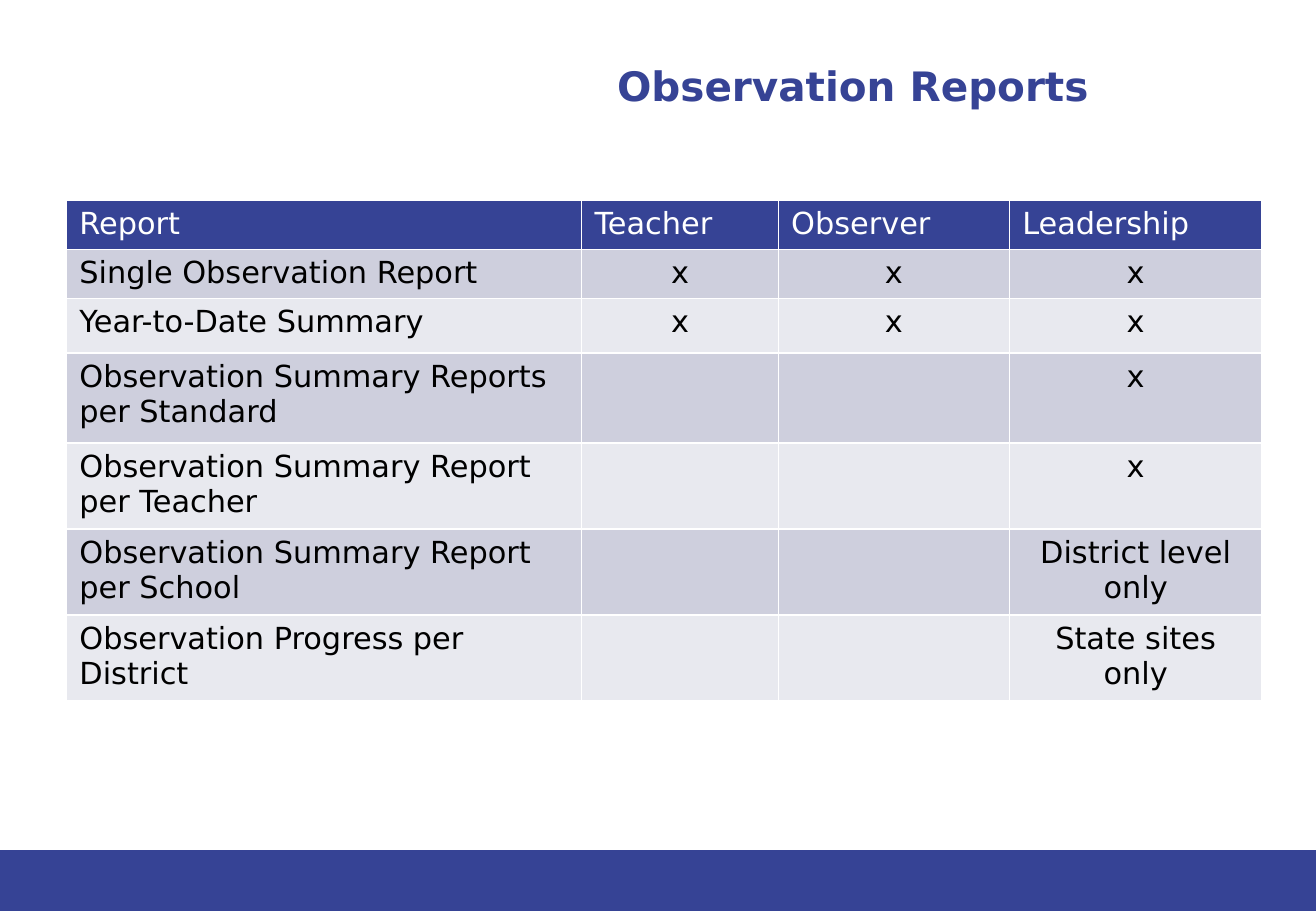
from dataclasses import dataclass

from lxml.etree import SubElement
from pptx import Presentation
from pptx.dml.color import RGBColor
from pptx.enum.shapes import MSO_SHAPE as Shape
from pptx.enum.text import MSO_ANCHOR as Anchor, PP_ALIGN as Align
from pptx.oxml.ns import qn
from pptx.slide import Slide
from pptx.table import _Cell as Cell
from pptx.text.text import TextFrame
from pptx.util import Cm, Pt

FONT = "DejaVu Sans"
COLORS = {
    "blue": "364395",
    "white": "FFFFFF",
    "black": "000000",
    "dark_band": "CECFDD",
    "light_band": "E8E9EF",
}
SLIDE_WIDTH, SLIDE_HEIGHT, FOOTER_HEIGHT = 27.51, 19.05, 1.27
COLUMN_WIDTHS = (10.77, 4.11, 4.83, 5.28)


@dataclass(frozen=True)
class ReportRow:
    height: float
    report: str
    teacher: str = ""
    observer: str = ""
    leadership: str = ""

    def texts(self) -> tuple[str, str, str, str]:
        return self.report, self.teacher, self.observer, self.leadership


ROWS = (
    ReportRow(1.02, "Report", "Teacher", "Observer", "Leadership"),
    ReportRow(1.03, "Single Observation Report", "x", "x", "x"),
    ReportRow(1.14, "Year-to-Date Summary", "x", "x", "x"),
    ReportRow(1.88, "Observation Summary Reports per Standard", leadership="x"),
    ReportRow(1.8, "Observation Summary Report per Teacher", leadership="x"),
    ReportRow(1.8, "Observation Summary Report per School", leadership="District level only"),
    ReportRow(1.8, "Observation Progress per District", leadership="State sites only"),
)


def rgb(name: str) -> RGBColor:
    return RGBColor.from_string(COLORS[name])


def write_text(frame: TextFrame, text: str, *, size: int = 18, color: str = "black",
               bold: bool = False, align: Align = Align.LEFT) -> None:
    frame.word_wrap = True
    paragraph = frame.paragraphs[0]
    paragraph.alignment = align
    run = paragraph.add_run()
    run.text = text
    run.font.name = FONT
    run.font.size = Pt(size)
    run.font.bold = bold
    run.font.color.rgb = rgb(color)


def add_borders(cell: Cell, color: str, width: float) -> None:
    properties = cell._tc.get_or_add_tcPr()
    for side in ("a:lnL", "a:lnR", "a:lnT", "a:lnB"):
        line = SubElement(properties, qn(side), w=str(Pt(width)))
        fill = SubElement(line, qn("a:solidFill"))
        SubElement(fill, qn("a:srgbClr"), val=COLORS[color])


def format_cell(cell: Cell, fill: str) -> None:
    cell.margin_left = cell.margin_right = Cm(0.27)
    cell.margin_top = cell.margin_bottom = Cm(0.13)
    add_borders(cell, "white", 1)
    cell.fill.solid()
    cell.fill.fore_color.rgb = rgb(fill)


def add_footer_band(slide: Slide) -> None:
    band = slide.shapes.add_shape(Shape.RECTANGLE, 0, Cm(SLIDE_HEIGHT - FOOTER_HEIGHT),
                                  Cm(SLIDE_WIDTH), Cm(FOOTER_HEIGHT))
    band.shadow.inherit = False
    band.fill.solid()
    band.fill.fore_color.rgb = rgb("blue")
    band.line.fill.background()


def add_title(slide: Slide, text: str) -> None:
    frame = slide.shapes.add_textbox(Cm(12.9), Cm(1.27), Cm(14.61), Cm(1.7)).text_frame
    frame.margin_left = frame.margin_top = 0
    frame.vertical_anchor = Anchor.TOP
    write_text(frame, text, size=24, color="blue", bold=True)


def add_report_table(slide: Slide) -> None:
    table = slide.shapes.add_table(
        len(ROWS), len(COLUMN_WIDTHS), Cm(1.39), Cm(4.19),
        Cm(sum(COLUMN_WIDTHS)), Cm(sum(row.height for row in ROWS)),
    ).table
    table.horz_banding = False
    for column, width in zip(table.columns, COLUMN_WIDTHS):
        column.width = Cm(width)
    for row_index, row in enumerate(ROWS):
        table.rows[row_index].height = Cm(row.height)
        is_header = row_index == 0
        band = "dark_band" if row_index % 2 else "light_band"
        for column_index, text in enumerate(row.texts()):
            cell = table.cell(row_index, column_index)
            format_cell(cell, "blue" if is_header else band)
            if text:
                is_left = is_header or column_index == 0
                write_text(cell.text_frame, text, color="white" if is_header else "black",
                           align=Align.LEFT if is_left else Align.CENTER)


def main() -> None:
    presentation = Presentation()
    presentation.slide_width = Cm(SLIDE_WIDTH)
    presentation.slide_height = Cm(SLIDE_HEIGHT)
    slide = presentation.slides.add_slide(presentation.slide_layouts[6])
    add_footer_band(slide)
    add_title(slide, "Observation Reports")
    add_report_table(slide)
    presentation.save("out.pptx")


if __name__ == "__main__":
    main()
